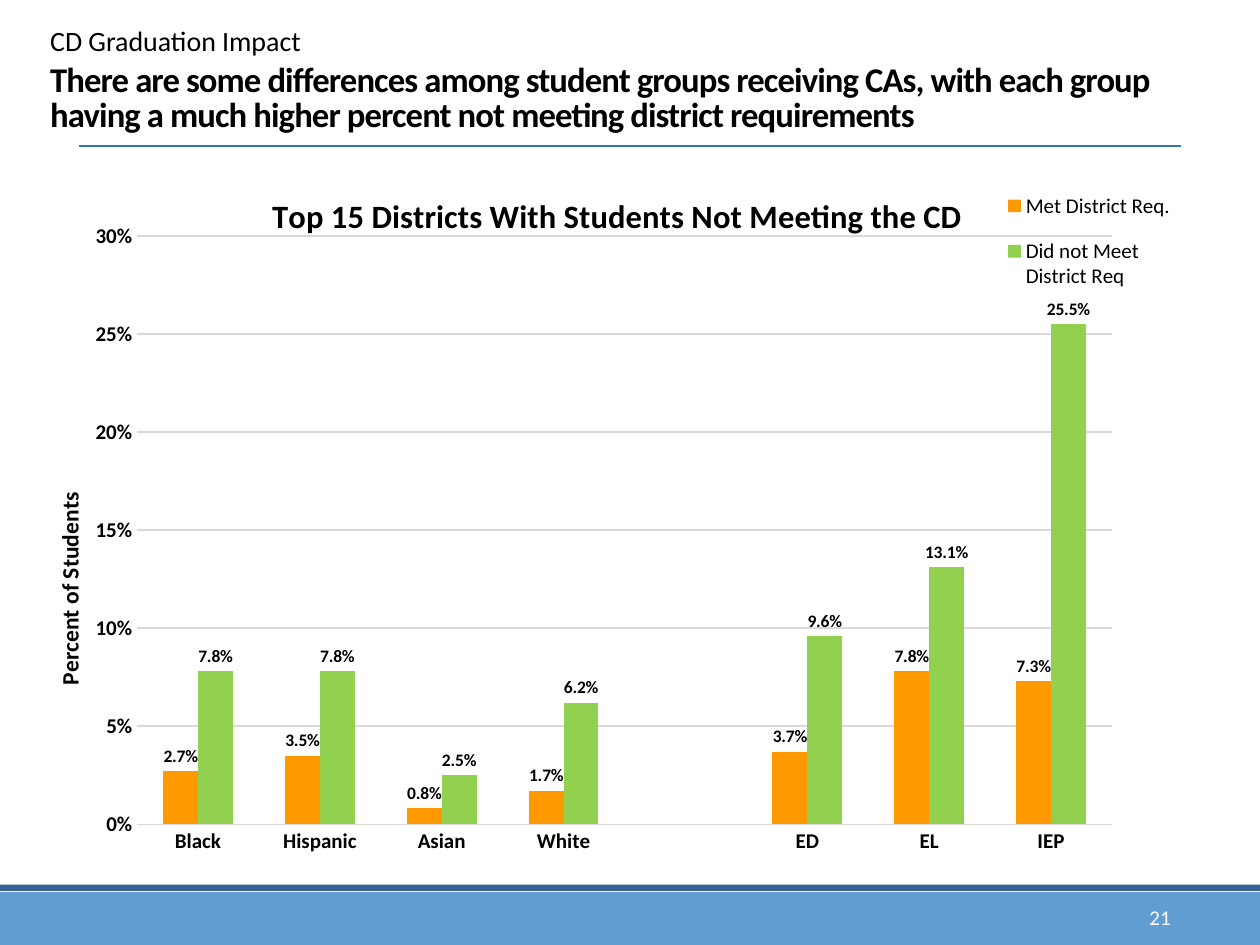
from dataclasses import dataclass

from pptx import Presentation
from pptx.chart.data import CategoryChartData
from pptx.dml.color import RGBColor
from pptx.enum.chart import XL_CHART_TYPE as ChartType
from pptx.enum.chart import XL_LABEL_POSITION as LabelPosition
from pptx.enum.chart import XL_LEGEND_POSITION as LegendPosition
from pptx.enum.chart import XL_TICK_MARK as TickMark
from pptx.enum.shapes import MSO_CONNECTOR as Connector
from pptx.enum.shapes import MSO_SHAPE as Preset
from pptx.enum.text import MSO_ANCHOR as Anchor
from pptx.enum.text import PP_ALIGN as Align
from pptx.oxml import parse_xml
from pptx.oxml.ns import nsdecls, qn
from pptx.util import Inches, Pt


@dataclass(frozen=True)
class Theme:
    font: str = "Calibri"
    text: str = "000000"
    light: str = "FFFFFF"
    footer: str = "629DD1"
    footer_edge: str = "376092"
    rule: str = "3477B2"
    grid: str = "D9D9D9"
    met: str = "FF9900"
    not_met: str = "92D050"
    headline: float = 19.8
    chart_title: float = 18.6
    kicker: float = 16
    axis_title: float = 13.4
    label: float = 12
    value: float = 10


class SlideBuilder:
    """Draws themed elements on a slide of 100 columns by 75 rows."""

    def __init__(self, presentation, theme):
        self.theme = theme
        self.columns = presentation.slide_width / 100
        self.rows = presentation.slide_height / 75
        self.slide = presentation.slides.add_slide(presentation.slide_layouts[6])

    def place(self, column, row, width, height):
        return (round(column * self.columns), round(row * self.rows),
                round(width * self.columns), round(height * self.rows))

    def style(self, font, size, color=None, bold=False):
        font.name = self.theme.font
        font.size = Pt(size)
        font.bold = bold
        font.color.rgb = RGBColor.from_string(color or self.theme.text)

    def band(self, area, color):
        shape = self.slide.shapes.add_shape(Preset.RECTANGLE, *self.place(*area))
        shape.shadow.inherit = False
        shape.fill.solid()
        shape.fill.fore_color.rgb = RGBColor.from_string(color)
        shape.line.fill.background()

    def rule(self, column, row, width, color):
        left, top, length, _ = self.place(column, row, width, 0)
        line = self.slide.shapes.add_connector(
            Connector.STRAIGHT, left, top, left + length, top)
        line.line.color.rgb = RGBColor.from_string(color)
        line.line.width = Pt(1)
        line._element.spPr.append(parse_xml(f"<a:effectLst {nsdecls('a')}/>"))

    def text(self, area, words, size, color=None, bold=False, align=Align.LEFT,
             anchor=Anchor.TOP, line_spacing=None, tracking=0):
        frame = self.slide.shapes.add_textbox(*self.place(*area)).text_frame
        frame.word_wrap = True
        frame.vertical_anchor = anchor
        paragraph = frame.paragraphs[0]
        paragraph.alignment = align
        paragraph.line_spacing = line_spacing
        run = paragraph.add_run()
        run.text = words
        self.style(run.font, size, color, bold)
        if tracking:
            run._r.get_or_add_rPr().set("spc", str(round(tracking * 100)))

    def layout(self, element, after=None, inner=False, **shares):
        for old in element.findall(qn("c:layout")):
            element.remove(old)
        target = '<c:layoutTarget val="inner"/>' if inner else ""
        modes = "".join(f'<c:{key}Mode val="edge"/>' for key in ("x", "y"))
        values = "".join(f'<c:{key} val="{share}"/>' for key, share in shares.items())
        layout = parse_xml(f"<c:layout {nsdecls('c')}><c:manualLayout>{target}{modes}"
                           f"{values}</c:manualLayout></c:layout>")
        if after:
            element.find(qn(after)).addnext(layout)
        else:
            element.insert(0, layout)

    def chart_heading(self, title, words, size, **shares):
        run = title.text_frame.paragraphs[0].add_run()
        run.text = words
        self.style(run.font, size, bold=True)
        self.layout(title._element, after="c:tx", **shares)

    def axis(self, axis):
        axis.major_tick_mark = axis.minor_tick_mark = TickMark.NONE
        self.style(axis.tick_labels.font, self.theme.label, bold=True)

    def hairline(self, line):
        line.color.rgb = RGBColor.from_string(self.theme.grid)
        line.width = Pt(0.75)

    def column_chart(self, area, title, axis_title, categories, series):
        data = CategoryChartData(number_format="0.0%")
        data.categories = categories
        for name, _, percents in series:
            data.add_series(name, [None if percent is None else round(percent / 100, 3)
                                   for percent in percents])
        chart = self.slide.shapes.add_chart(
            ChartType.COLUMN_CLUSTERED, *self.place(*area), data).chart
        self.style(chart.font, self.theme.value)
        self.chart_heading(chart.chart_title, title, self.theme.chart_title, x=0.2, y=0.04)
        self.layout(chart._chartSpace.chart.plotArea, inner=True,
                    x=0.087, y=0.108, w=0.853, h=0.822)

        self.axis(chart.category_axis)
        self.hairline(chart.category_axis.format.line)
        values = chart.value_axis
        self.axis(values)
        values.minimum_scale, values.maximum_scale, values.major_unit = 0, 0.3, 0.05
        values.tick_labels.number_format = "0%"
        values.tick_labels.number_format_is_linked = False
        values.format.line.fill.background()
        self.hairline(values.major_gridlines.format.line)
        self.chart_heading(values.axis_title, axis_title, self.theme.axis_title,
                           x=0.01, y=0.46)

        chart.has_legend = True
        chart.legend.position = LegendPosition.RIGHT
        chart.legend.include_in_layout = False
        self.style(chart.legend.font, self.theme.label)
        self.layout(chart.legend._element, after="c:legendPos",
                    x=0.85, y=0.02, w=0.15, h=0.19)

        plot = chart.plots[0]
        plot.gap_width = 150
        plot.vary_by_categories = False
        for column, (_, color, _) in zip(plot.series, series):
            column.format.fill.solid()
            column.format.fill.fore_color.rgb = RGBColor.from_string(color)
            labels = column.data_labels
            labels.show_value = True
            labels.position = LabelPosition.OUTSIDE_END
            labels.number_format = "0.0%"
            labels.number_format_is_linked = False
            self.style(labels.font, self.theme.value, bold=True)


def main():
    presentation = Presentation()
    presentation.slide_width, presentation.slide_height = Inches(10), Inches(7.5)
    theme = Theme()
    builder = SlideBuilder(presentation, theme)

    builder.band((0, 70.8, 100, 4.2), theme.footer)
    builder.band((0, 70.2, 100, 0.5), theme.footer_edge)
    builder.rule(6.3, 11.6, 87.4, theme.rule)
    builder.text((83.1, 71.8, 10.8, 2), "21", theme.label, theme.light,
                 align=Align.RIGHT, anchor=Anchor.MIDDLE)
    builder.text((3, 4.2, 93.9, 7),
                 "There are some differences among student groups receiving CAs, with each "
                 "group having a much higher percent not meeting district requirements",
                 theme.headline, bold=True, anchor=Anchor.BOTTOM,
                 line_spacing=0.85, tracking=-0.5)
    builder.column_chart(
        (3, 12.6, 90.7, 56.8),
        "Top 15 Districts With Students Not Meeting the CD", "Percent of Students",
        ["Black", "Hispanic", "Asian", "White", "", "ED", "EL", "IEP"],
        [("Met District Req.", theme.met, [2.7, 3.5, 0.8, 1.7, None, 3.7, 7.8, 7.3]),
         ("Did not Meet District Req", theme.not_met,
          [7.8, 7.8, 2.5, 6.2, None, 9.6, 13.1, 25.5])])
    builder.text((3, 1.4, 23.6, 3.7), "CD Graduation Impact", theme.kicker)
    presentation.save("out.pptx")


if __name__ == "__main__":
    main()
